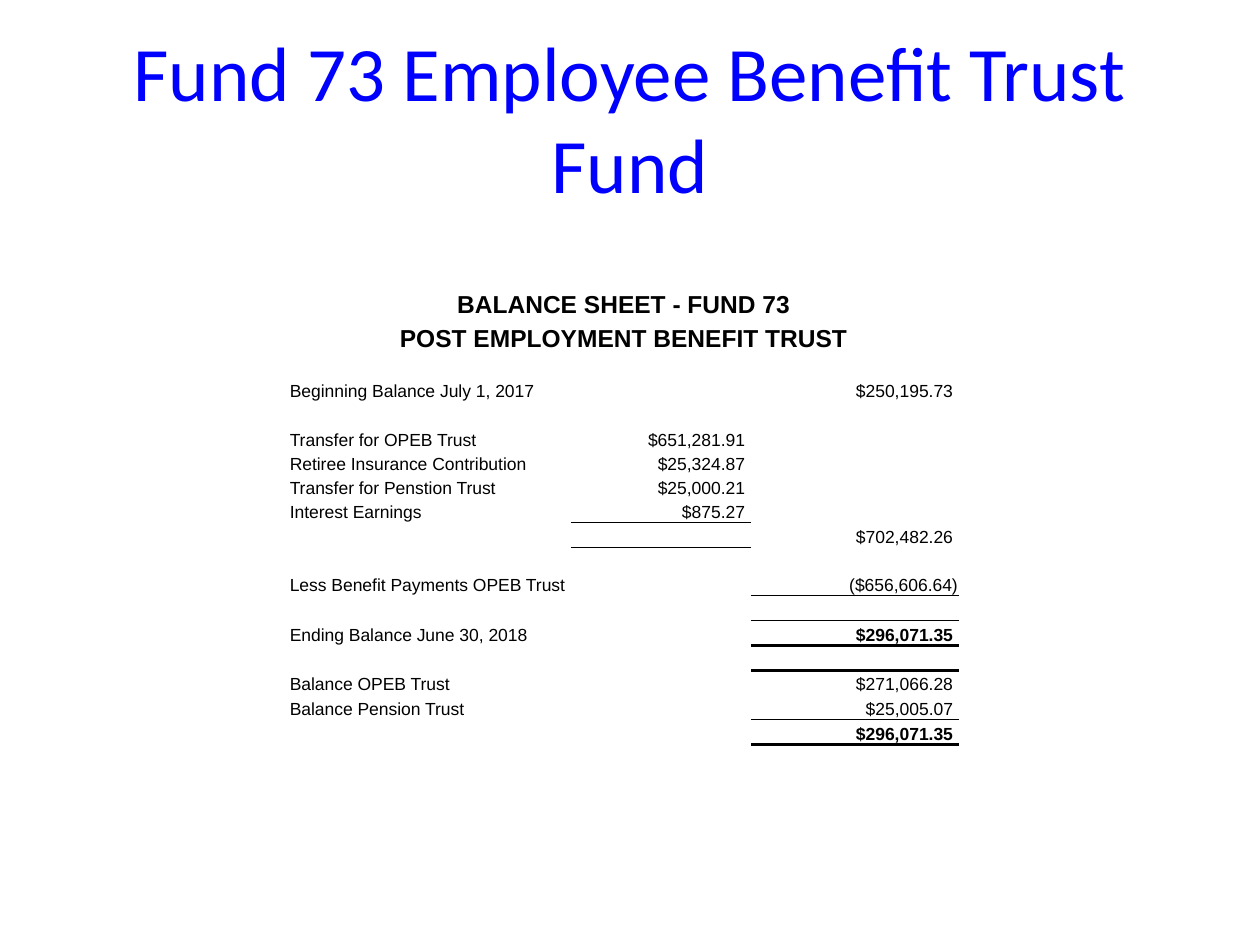
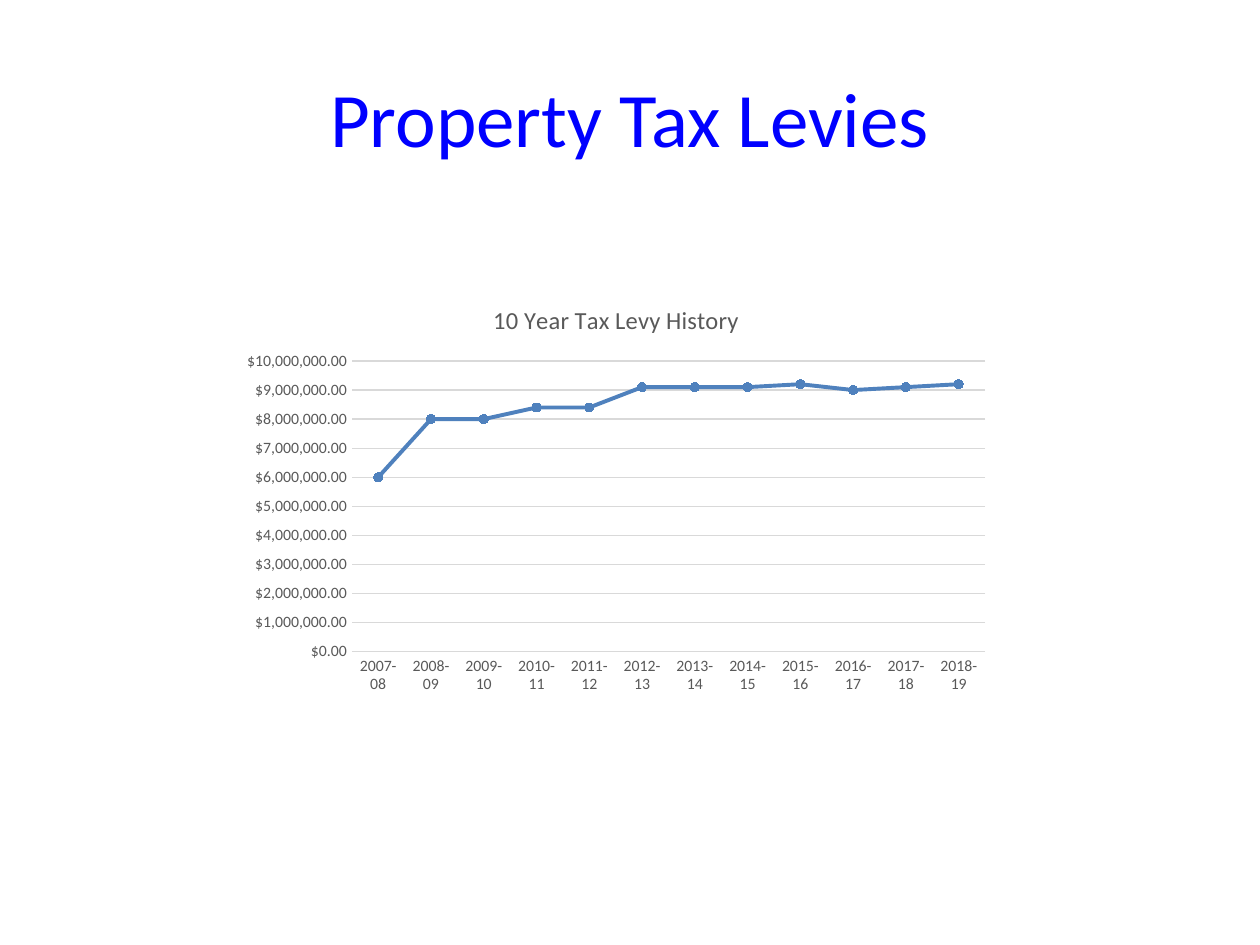
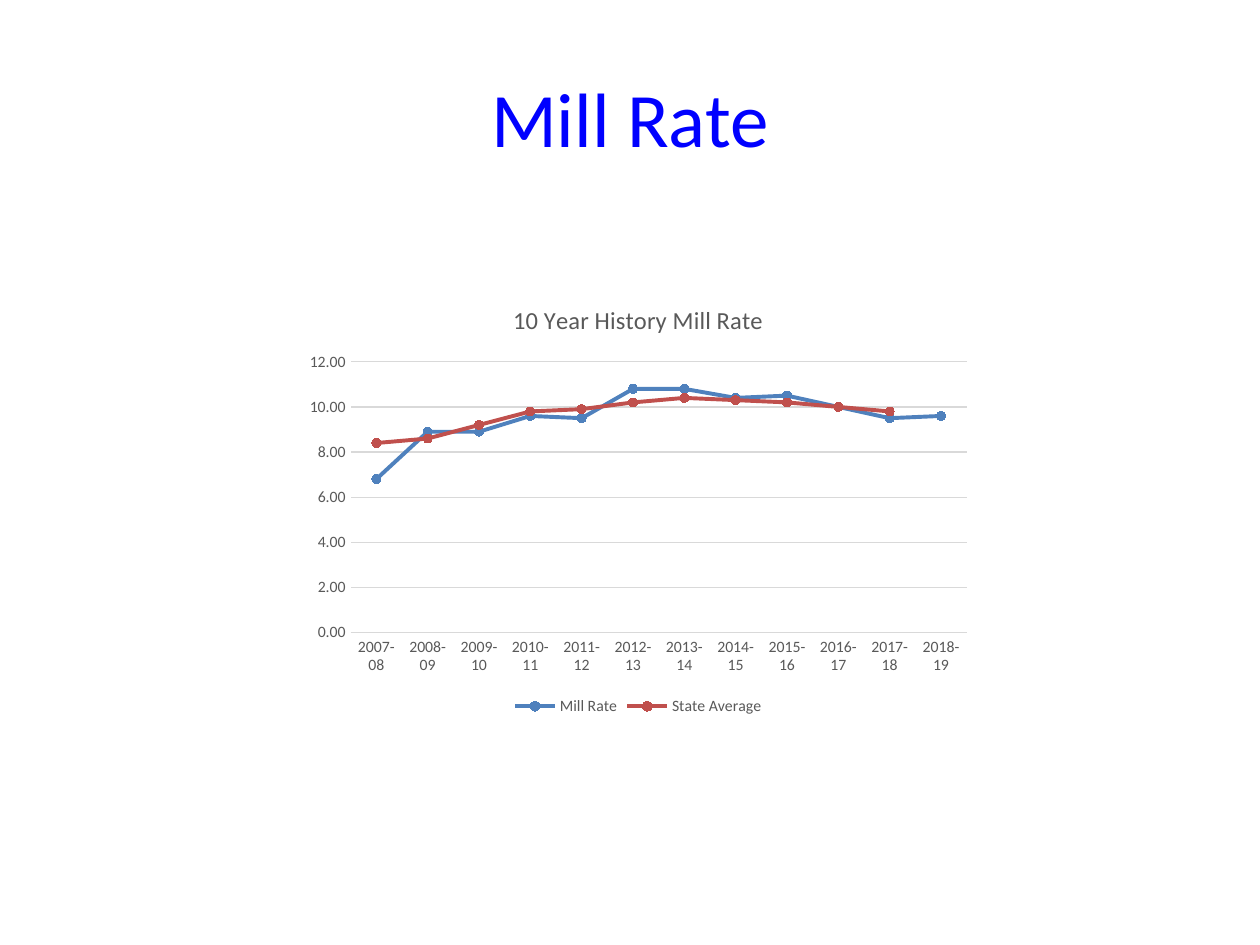
from lxml.etree import SubElement
from pptx import Presentation
from pptx.chart.data import CategoryChartData
from pptx.dml.color import RGBColor
from pptx.enum.chart import XL_CHART_TYPE as CHART, XL_LEGEND_POSITION as LEGEND
from pptx.enum.chart import XL_MARKER_STYLE as MARKER, XL_TICK_MARK as TICK
from pptx.enum.text import MSO_ANCHOR as ANCHOR, MSO_AUTO_SIZE as FIT, PP_ALIGN as ALIGN
from pptx.oxml.ns import qn
from pptx.util import Pt

COLORS = {"title": "0000FF", "text": "000000", "label": "595959", "grid": "D9D9D9",
          "blue": "4F81BD", "red": "C0504D"}
TITLE_BOX = (36, 21.6, 648, 90)
NO_STYLE = "{2D5ABB26-0587-4C30-8999-92F81FD0307C}"
YEARS = [f"{y}-{y % 100 + 1:02}" for y in range(2007, 2019)]

COL_WIDTHS = [54.7, 106.6, 103, 118.8]
HEADING_ROWS, TALL_ROWS = (0, 1), (13, 14, 17)
BALANCE = {
    0: {0: "BALANCE SHEET - FUND 73"},
    1: {0: "POST EMPLOYMENT BENEFIT TRUST"},
    3: {0: "Beginning Balance July 1, 2017", 3: "$250,195.73 "},
    5: {0: "Transfer for OPEB Trust", 2: "$651,281.91 "},
    6: {0: "Retiree Insurance Contribution", 2: "$25,324.87 "},
    7: {0: "Transfer for Penstion Trust", 2: "$25,000.21 "},
    8: {0: "Interest Earnings", 2: "$875.27 "},
    9: {3: "$702,482.26 "},
    11: {0: "Less Benefit Payments OPEB Trust", 3: "($656,606.64)"},
    13: {0: "Ending Balance June 30, 2018", 3: "$296,071.35 "},
    15: {0: "Balance OPEB Trust", 3: "$271,066.28 "},
    16: {0: "Balance Pension Trust", 3: "$25,005.07 "},
    17: {3: "$296,071.35 "},
}
SPANS = {0: 4, 1: 4, 11: 3}
RULES = {(8, 2): 0.5, (11, 3): 0.5, (13, 3): 2, (16, 3): 0.5, (17, 3): 2}
BOLD_CELLS = [(0, 0), (1, 0), (13, 3), (17, 3)]

LEVIES = [("Series 1", "blue", [6000000, 8000000, 8000000, 8400000, 8400000, 9100000,
                                9100000, 9100000, 9200000, 9000000, 9100000, 9200000])]
MILL_RATES = [
    ("Mill Rate", "blue", [6.8, 8.9, 8.9, 9.6, 9.5, 10.8, 10.8, 10.4, 10.5, 10, 9.5, 9.6]),
    ("State Average", "red", [8.4, 8.6, 9.2, 9.8, 9.9, 10.2, 10.4, 10.3, 10.2, 10, 9.8, None]),
]


def rgb(name):
    return RGBColor.from_string(COLORS[name])


def set_font(font, name, size, color, bold=False):
    font.name, font.size, font.bold = name, Pt(size), bold
    font.color.rgb = rgb(color)


def add_titled_slide(prs, title):
    s = prs.slides.add_slide(prs.slide_layouts[5])
    sp = s.shapes.title
    sp.left, sp.top, sp.width, sp.height = map(Pt, TITLE_BOX)
    tf = sp.text_frame
    tf.text = title
    tf.auto_size, tf.vertical_anchor = FIT.NONE, ANCHOR.MIDDLE
    p = tf.paragraphs[0]
    p.alignment = ALIGN.CENTER
    set_font(p.font, "Calibri", 44, "title")
    return s


def add_border(cell, tag, width):
    ln = SubElement(cell._tc.get_or_add_tcPr(), qn(tag), w=str(Pt(width)))
    fill = SubElement(ln, qn("a:solidFill"))
    SubElement(fill, qn("a:srgbClr"), val=COLORS["text"])


def format_cell(cell, row, col, text):
    cell.margin_left = cell.margin_right = cell.margin_top = Pt(0.7)
    cell.margin_bottom = 0
    cell.vertical_anchor = ANCHOR.BOTTOM
    for tag, key in (("a:lnT", (row - 1, col)), ("a:lnB", (row, col))):
        if key in RULES:
            add_border(cell, tag, RULES[key])
    cell.fill.background()
    cell.text = text
    p = cell.text_frame.paragraphs[0]
    heading = row in HEADING_ROWS
    p.alignment = ALIGN.CENTER if heading else ALIGN.RIGHT if col > 1 else ALIGN.LEFT
    set_font(p.font, "Arial", 14 if heading else 10, "text", (row, col) in BOLD_CELLS)
    if not text:
        p._p.get_or_add_endParaRPr().set("sz", "1000")


def add_balance_sheet(s, box):
    tbl = s.shapes.add_table(18, len(COL_WIDTHS), *map(Pt, box)).table
    tbl.first_row = tbl.horz_banding = False
    tbl._tbl.tblPr.find(qn("a:tableStyleId")).text = NO_STYLE
    for column, width in zip(tbl.columns, COL_WIDTHS):
        column.width = Pt(width)
    for i, row in enumerate(tbl.rows):
        row.height = Pt(19.4 if i in HEADING_ROWS else 14.4 if i in TALL_ROWS else 13.9)
        texts = BALANCE.get(i, {})
        for j, cell in enumerate(row.cells):
            format_cell(cell, i, j, texts.get(j, ""))
        if 0 in texts:
            tbl.cell(i, 0).merge(tbl.cell(i, SPANS.get(i, 2) - 1))


def style_axis(axis):
    axis.major_tick_mark = axis.minor_tick_mark = TICK.NONE
    set_font(axis.tick_labels.font, "Calibri", 9, "label")


def set_line(line, color, width):
    line.color.rgb, line.width = rgb(color), Pt(width)


def add_history_chart(s, box, title, series, number_format, top, step):
    data = CategoryChartData(number_format=number_format)
    data.categories = YEARS
    for name, _, values in series:
        data.add_series(name, values)
    chart = s.shapes.add_chart(CHART.LINE_MARKERS, *map(Pt, box), data).chart
    set_font(chart.font, "Calibri", 10, "text")
    chart.has_title = True
    chart.chart_title.include_in_layout = False
    tf = chart.chart_title.text_frame
    tf.text = title
    set_font(tf.paragraphs[0].font, "Calibri", 14, "label")

    style_axis(chart.category_axis)
    set_line(chart.category_axis.format.line, "grid", 0.75)
    axis = chart.value_axis
    style_axis(axis)
    axis.minimum_scale, axis.maximum_scale, axis.major_unit = 0, top, step
    axis.format.line.fill.background()
    axis.has_major_gridlines = True
    set_line(axis.major_gridlines.format.line, "grid", 0.75)
    axis.tick_labels.number_format = number_format
    axis.tick_labels.number_format_is_linked = False

    chart.plots[0].vary_by_categories = False
    for ser, (_, color, _) in zip(chart.plots[0].series, series):
        ser.smooth = False
        set_line(ser.format.line, color, 2.25)
        ser.marker.style, ser.marker.size = MARKER.CIRCLE, 5
        ser.marker.format.fill.solid()
        ser.marker.format.fill.fore_color.rgb = rgb(color)
        set_line(ser.marker.format.line, color, 0.75)

    chart.has_legend = len(series) > 1
    if chart.has_legend:
        chart.legend.position = LEGEND.BOTTOM
        chart.legend.include_in_layout = False
        set_font(chart.legend.font, "Calibri", 9, "label")


def main():
    prs = Presentation()
    prs.slide_width, prs.slide_height = Pt(720), Pt(540)
    s = add_titled_slide(prs, "Fund 73 Employee Benefit Trust Fund")
    add_balance_sheet(s, (164.9, 162.7, 383.1, 262.7))
    s = add_titled_slide(prs, "Property Tax Levies")
    add_history_chart(s, (132.5, 162, 439.2, 239), "10 Year Tax Levy History",
                      LEVIES, '"$"#,##0.00', 10000000, 1000000)
    s = add_titled_slide(prs, "Mill Rate")
    add_history_chart(s, (169.2, 162, 391, 249.8), "10 Year History Mill Rate",
                      MILL_RATES, "0.00", 12, 2)
    prs.save("out.pptx")


if __name__ == "__main__":
    main()
